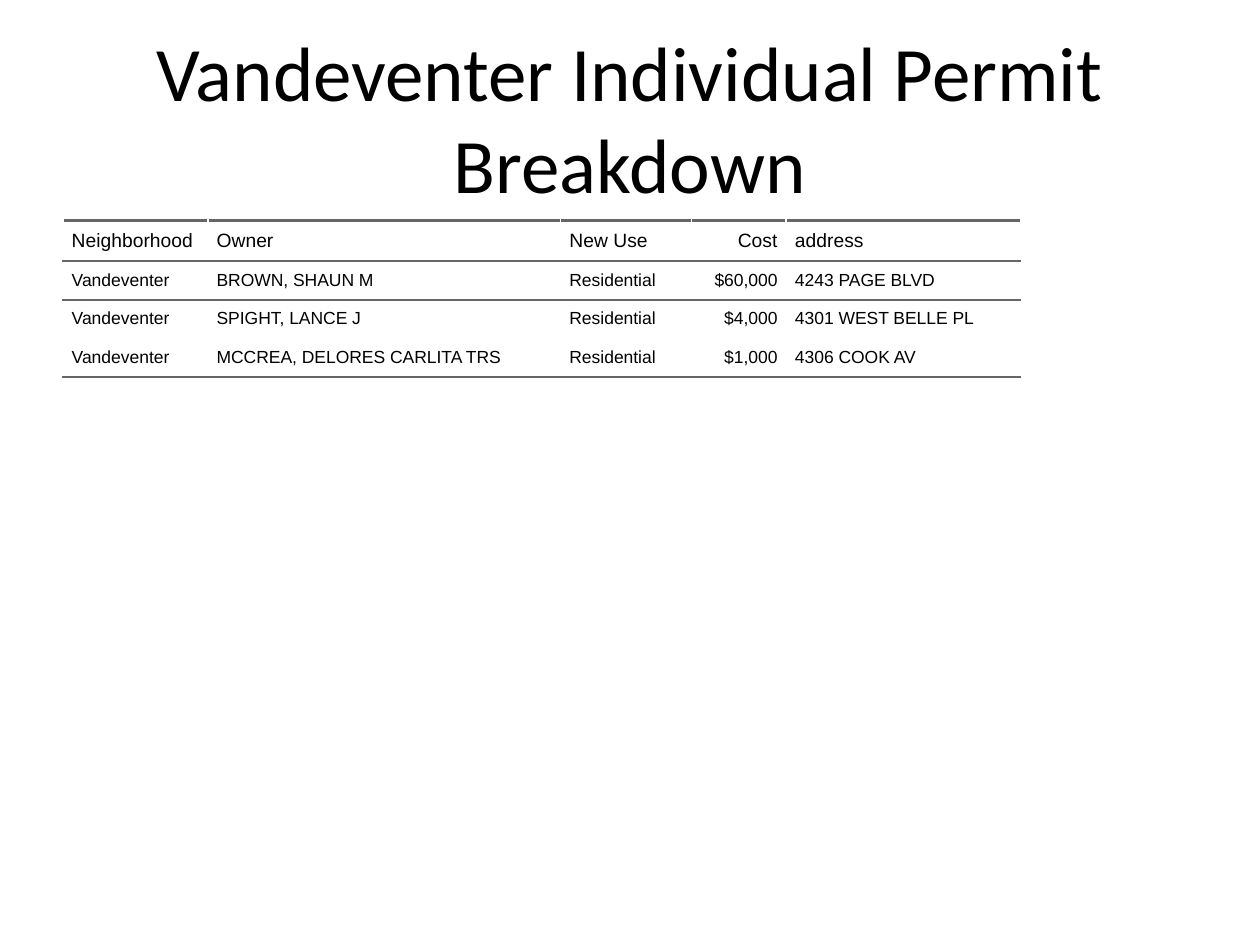
from lxml import etree
from pptx import Presentation
from pptx.dml.color import RGBColor
from pptx.enum.text import MSO_ANCHOR, PP_ALIGN
from pptx.oxml.ns import qn
from pptx.util import Pt

LEFT, CENTER, RIGHT = PP_ALIGN.LEFT, PP_ALIGN.CENTER, PP_ALIGN.RIGHT
MIDDLE = MSO_ANCHOR.MIDDLE

BLACK = RGBColor(0x00, 0x00, 0x00)
GRAY = RGBColor(0x66, 0x66, 0x66)

# Column name, width in points, alignment
COLUMNS = [
    ("Neighborhood", 82.8, LEFT),
    ("Owner", 201.6, LEFT),
    ("New Use", 74.88, LEFT),
    ("Cost", 54, RIGHT),
    ("address", 133.92, LEFT),
]
PERMITS = [
    ("Vandeventer", "BROWN, SHAUN M", "Residential", "$60,000", "4243 PAGE BLVD"),
    ("Vandeventer", "SPIGHT, LANCE J", "Residential", "$4,000", "4301 WEST BELLE PL"),
    ("Vandeventer", "MCCREA, DELORES CARLITA TRS", "Residential", "$1,000", "4306 COOK AV"),
]
ROW_HEIGHT = 18
CELL_FORMAT = {
    "margin_left": Pt(5),
    "margin_right": Pt(5),
    "margin_top": Pt(5),
    "margin_bottom": Pt(5),
    "vertical_anchor": MIDDLE,
}


def write(tf, text, font, size, align):
    p = tf.paragraphs[0]
    p.alignment = align
    r = p.add_run()
    r.text = text
    for name, value in {"name": font, "size": Pt(size), "bold": False}.items():
        setattr(r.font, name, value)
    r.font.color.rgb = BLACK


def add_rule(cell, edge):
    """Draw one horizontal border; edge is 'lnT' or 'lnB'."""
    tc_pr = cell._tc.get_or_add_tcPr()
    line = etree.SubElement(tc_pr, qn(f"a:{edge}"), w=str(Pt(1.5)))
    fill = etree.SubElement(line, qn("a:solidFill"))
    etree.SubElement(fill, qn("a:srgbClr"), val=str(GRAY))


def add_title(s, left, top, width, height, text):
    sp = s.shapes.add_textbox(Pt(left), Pt(top), Pt(width), Pt(height))
    tf = sp.text_frame
    tf.word_wrap = True
    tf.vertical_anchor = MIDDLE
    write(tf, text, "Calibri", 44, CENTER)


def add_permit_table(s, left, top):
    rows = [[name for name, _, _ in COLUMNS], *PERMITS]
    width = sum(w for _, w, _ in COLUMNS)
    frame = s.shapes.add_table(len(rows), len(COLUMNS), Pt(left), Pt(top),
                               Pt(width), Pt(ROW_HEIGHT * len(rows)))
    table = frame.table
    table.first_row = table.horz_banding = False
    for column, (_, w, _) in zip(table.columns, COLUMNS):
        column.width = Pt(w)

    # Rules lie above and below the header and under the last row
    ruled = {0, 1, len(rows)}
    for i, row in enumerate(rows):
        for j, text in enumerate(row):
            cell = table.cell(i, j)
            for name, value in CELL_FORMAT.items():
                setattr(cell, name, value)
            for edge, position in (("lnT", i), ("lnB", i + 1)):
                if position in ruled:
                    add_rule(cell, edge)
            cell.fill.background()
            write(cell.text_frame, text, "Arial", 11 if i == 0 else 10, COLUMNS[j][2])


def main():
    prs = Presentation()
    prs.slide_width, prs.slide_height = Pt(720), Pt(540)
    s = prs.slides.add_slide(prs.slide_layouts[6])
    add_title(s, 36, 21.6, 648, 90, "Vandeventer Individual Permit Breakdown")
    add_permit_table(s, 36, 126)
    prs.save("out.pptx")


if __name__ == "__main__":
    main()
